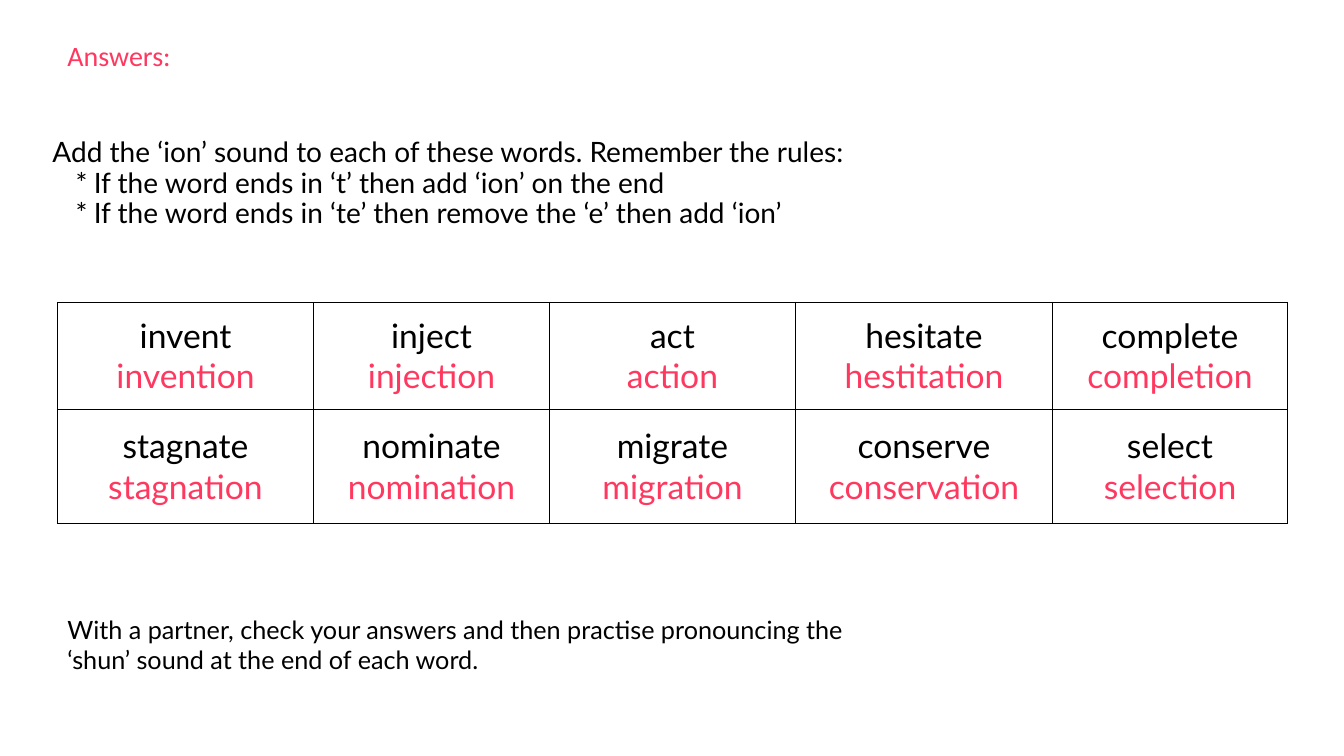
from pptx import Presentation
from pptx.dml.color import RGBColor
from pptx.enum import text
from pptx.oxml import parse_xml
from pptx.oxml.ns import nsdecls
from pptx.util import Inches, Pt

COLORS = {"ink": "000000", "answer": "FF3860"}

INTRO = "Add the ‘ion’ sound to each of these words. Remember the rules:"
RULES = [
    "If the word ends in ‘t’ then add ‘ion’ on the end",
    "If the word ends in ‘te’ then remove the ‘e’ then add ‘ion’",
]
WORDS = [
    [("invent", "invention"), ("inject", "injection"), ("act", "action"),
     ("hesitate", "hestitation"), ("complete", "completion")],
    [("stagnate", "stagnation"), ("nominate", "nomination"),
     ("migrate", "migration"), ("conserve", "conservation"),
     ("select", "selection")],
]
COL_WIDTHS = [2.54, 2.34, 2.44, 2.55, 2.33]
ROW_HEIGHTS = [1.06, 1.13]


def add_run(p, words, size, color="ink", font="Lato"):
    r = p.add_run()
    r.text = words
    r.font.size = Pt(size)
    r.font.name = font
    r.font.color.rgb = RGBColor.from_string(COLORS[color])


def add_star(p):
    """Give the paragraph a hanging star bullet."""
    pPr = p._p.get_or_add_pPr()
    pPr.set("marL", str(Inches(0.41)))
    pPr.set("indent", str(-Inches(0.18)))
    pPr.append(parse_xml(f'<a:buFont {nsdecls("a")} typeface="Lato"/>'))
    pPr.append(parse_xml(f'<a:buChar {nsdecls("a")} char="*"/>'))


def set_title(s):
    title = s.shapes.title
    title.left, title.top = Inches(0.42), Inches(1.18)
    title.width, title.height = Inches(10.32), Inches(1.29)
    tf = title.text_frame
    tf.word_wrap = True
    tf.auto_size = text.MSO_AUTO_SIZE.NONE
    tf.vertical_anchor = text.MSO_ANCHOR.MIDDLE
    for i, line in enumerate([INTRO] + RULES):
        p = tf.add_paragraph() if i else tf.paragraphs[0]
        p.alignment = text.PP_ALIGN.LEFT
        p.line_spacing = 0.9
        if i:
            add_star(p)
        add_run(p, line, 20)


def add_text(s, left, top, width, height, words, size, **style):
    box = s.shapes.add_textbox(Inches(left), Inches(top),
                               Inches(width), Inches(height))
    tf = box.text_frame
    tf.word_wrap = True
    tf.auto_size = text.MSO_AUTO_SIZE.SHAPE_TO_FIT_TEXT
    add_run(tf.paragraphs[0], words, size, **style)


def add_borders(cell):
    tcPr = cell._tc.get_or_add_tcPr()
    for i, side in enumerate(("lnL", "lnR", "lnT", "lnB")):
        tcPr.insert(i, parse_xml(
            f'<a:{side} {nsdecls("a")} w="{Pt(1)}"><a:solidFill>'
            f'<a:srgbClr val="{COLORS["ink"]}"/></a:solidFill></a:{side}>'))


def fill_cell(cell, word, answer):
    cell.fill.background()
    add_borders(cell)
    cell.vertical_anchor = text.MSO_ANCHOR.MIDDLE
    tf = cell.text_frame
    add_run(tf.paragraphs[0], word, 24)
    add_run(tf.add_paragraph(), answer, 24, "answer")
    for p in tf.paragraphs:
        p.alignment = text.PP_ALIGN.CENTER


def add_word_table(s):
    table = s.shapes.add_table(
        len(ROW_HEIGHTS), len(COL_WIDTHS), Inches(0.57), Inches(3),
        Inches(sum(COL_WIDTHS)), Inches(sum(ROW_HEIGHTS))).table
    table.first_row = table.horz_banding = False
    for col, width in zip(table.columns, COL_WIDTHS):
        col.width = Inches(width)
    for row, height, pairs in zip(table.rows, ROW_HEIGHTS, WORDS):
        row.height = Inches(height)
        for cell, (word, answer) in zip(row.cells, pairs):
            fill_cell(cell, word, answer)


def main():
    prs = Presentation()
    prs.slide_width, prs.slide_height = Inches(13.33), Inches(7.5)
    s = prs.slides.add_slide(prs.slide_layouts[5])

    # Task and rules
    set_title(s)
    # Words with their answers
    add_word_table(s)
    # Partner activity and heading
    add_text(s, 0.57, 6.04, 8.07, 0.71,
             "With a partner, check your answers and then practise pronouncing "
             "the ‘shun’ sound at the end of each word.", 18)
    add_text(s, 0.57, 0.33, 1.71, 0.44, "Answers:", 20,
             color="answer", font="Calibri")

    prs.save("out.pptx")


if __name__ == "__main__":
    main()
